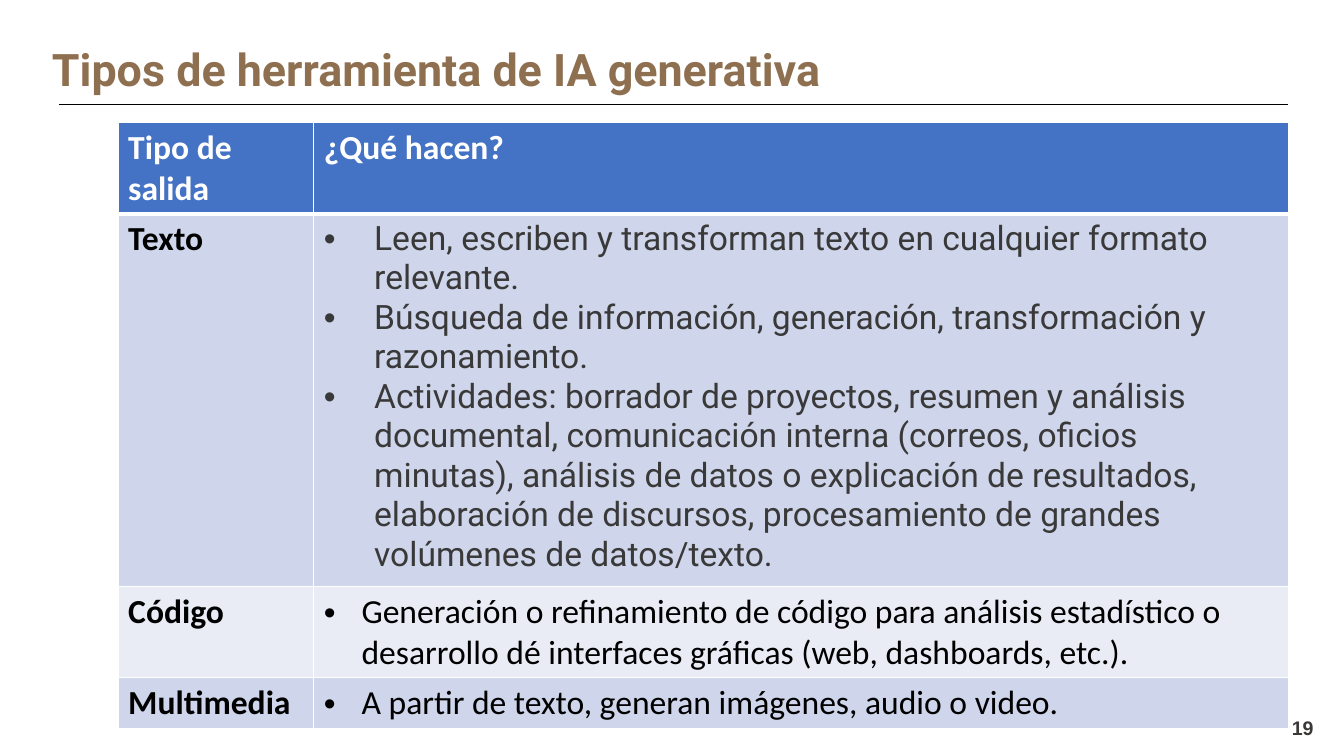
import pptx
import pptx.util
import pptx.dml.color
import pptx.enum.shapes
import pptx.enum.text
import pptx.oxml
import pptx.oxml.ns
import lxml.etree

Pt = pptx.util.Pt
RGBColor = pptx.dml.color.RGBColor
Anchor = pptx.enum.text.MSO_ANCHOR
Align = pptx.enum.text.PP_ALIGN

BROWN = RGBColor(0x8E, 0x70, 0x50)
BLUE = RGBColor(0x44, 0x72, 0xC4)
BAND_DARK = RGBColor(0xCF, 0xD5, 0xEA)
BAND_LIGHT = RGBColor(0xE9, 0xEB, 0xF5)
BLACK = RGBColor(0, 0, 0)
WHITE = RGBColor(0xFF, 0xFF, 0xFF)
GRAY = RGBColor(0x39, 0x39, 0x39)
NUMBER_GRAY = RGBColor(0x3B, 0x38, 0x38)

TITLE = "Tipos de herramienta de IA generativa"
PAGE_NUMBER = "19"
HEADER = ("Tipo de salida", "¿Qué hacen?")
# Output type, bullets, bullet font, bullet colour, hanging indent
TOOLS = [
    ("Texto", [
        "Leen, escriben y transforman texto en cualquier formato relevante.",
        "Búsqueda de información, generación, transformación y razonamiento.",
        "Actividades: borrador de proyectos, resumen y análisis documental, "
        "comunicación interna (correos, oficios minutas), análisis de datos o "
        "explicación de resultados, elaboración de discursos, procesamiento de "
        "grandes volúmenes de datos/texto.",
    ], "Roboto", GRAY, 36),
    ("Código", [
        "Generación o refinamiento de código para análisis estadístico o "
        "desarrollo dé interfaces gráficas (web, dashboards, etc.).",
    ], "Calibri", BLACK, 27),
    ("Multimedia", ["A partir de texto, generan imágenes, audio o video."],
     "Calibri", BLACK, 27),
]
COLUMN_WIDTHS = (139.7, 696.3)
ROW_HEIGHTS = (65, 266, 65, 36)


def set_font(paragraph, name, size, color, bold):
    font = paragraph.font
    font.name, font.size, font.bold = name, Pt(size), bold
    font.color.rgb = color


def add_bullet(paragraph, indent):
    properties = paragraph._p.get_or_add_pPr()
    properties.set("marL", str(Pt(indent)))
    properties.set("indent", str(-Pt(indent)))
    for tag, key, value in (("buFont", "typeface", "Arial"), ("buChar", "char", "•")):
        element = lxml.etree.SubElement(properties, pptx.oxml.ns.qn("a:" + tag))
        element.set(key, value)


def style_cell(cell, fill, top, bottom):
    """Draw white borders (widths in points for top and bottom), then fill."""
    properties = cell._tc.get_or_add_tcPr()
    for side, width in (("L", 1), ("R", 1), ("T", top), ("B", bottom)):
        properties.append(pptx.oxml.parse_xml(
            f'<a:ln{side} {pptx.oxml.ns.nsdecls("a")} w="{Pt(width)}">'
            f'<a:solidFill><a:srgbClr val="{WHITE}"/></a:solidFill></a:ln{side}>'))
    cell.fill.solid()
    cell.fill.fore_color.rgb = fill


def write_cell(cell, lines, name, color, bold, indent=0):
    frame = cell.text_frame
    for index, line in enumerate(lines):
        paragraph = frame.add_paragraph() if index else frame.paragraphs[0]
        paragraph.text = line
        if indent:
            add_bullet(paragraph, indent)
        set_font(paragraph, name, 24, color, bold)


def add_title(page):
    title = page.shapes.title
    title.left, title.top, title.width, title.height = Pt(27.4), Pt(23.8), Pt(900.7), Pt(51)
    frame = title.text_frame
    frame.text = TITLE
    frame.vertical_anchor = Anchor.TOP
    frame.margin_left, frame.margin_top = Pt(9.7), Pt(6.1)
    frame.paragraphs[0].alignment = Align.LEFT
    set_font(frame.paragraphs[0], "Roboto", 32, BROWN, True)


def add_page_number(page):
    box = page.shapes.add_textbox(Pt(729.4), Pt(503.3), Pt(216), Pt(28.8))
    frame = box.text_frame
    frame.word_wrap = True
    frame.vertical_anchor = Anchor.BOTTOM
    frame.text = PAGE_NUMBER
    frame.paragraphs[0].alignment = Align.RIGHT
    set_font(frame.paragraphs[0], "Arial", 14, NUMBER_GRAY, True)


def add_rule(page):
    rule = page.shapes.add_connector(
        pptx.enum.shapes.MSO_CONNECTOR.STRAIGHT, Pt(42), Pt(74.8), Pt(920), Pt(74.8))
    rule.line.color.rgb = BLACK
    rule.line.width = Pt(0.5)
    lxml.etree.SubElement(rule._element.spPr, pptx.oxml.ns.qn("a:effectLst"))


def add_tools_table(page):
    table = page.shapes.add_table(
        len(TOOLS) + 1, len(HEADER), Pt(84.4), Pt(87.8),
        Pt(sum(COLUMN_WIDTHS)), Pt(sum(ROW_HEIGHTS))).table
    for column, width in zip(table.columns, COLUMN_WIDTHS):
        column.width = Pt(width)
    for row, height in zip(table.rows, ROW_HEIGHTS):
        row.height = Pt(height)

    for column, text in enumerate(HEADER):
        cell = table.cell(0, column)
        style_cell(cell, BLUE, 1, 3)
        write_cell(cell, [text], "Calibri", WHITE, True)
    for row, (kind, bullets, name, color, indent) in enumerate(TOOLS, 1):
        for cell in table.rows[row].cells:
            style_cell(cell, BAND_DARK if row % 2 else BAND_LIGHT, 3 if row == 1 else 1, 1)
        write_cell(table.cell(row, 0), [kind], "Calibri", BLACK, True)
        write_cell(table.cell(row, 1), bullets, name, color, False, indent)


def main():
    deck = pptx.Presentation()
    deck.slide_width, deck.slide_height = Pt(960), Pt(540)
    page = deck.slides.add_slide(deck.slide_layouts.get_by_name("Title Only"))
    add_title(page)
    add_page_number(page)
    add_rule(page)
    add_tools_table(page)
    deck.save("out.pptx")


if __name__ == "__main__":
    main()
